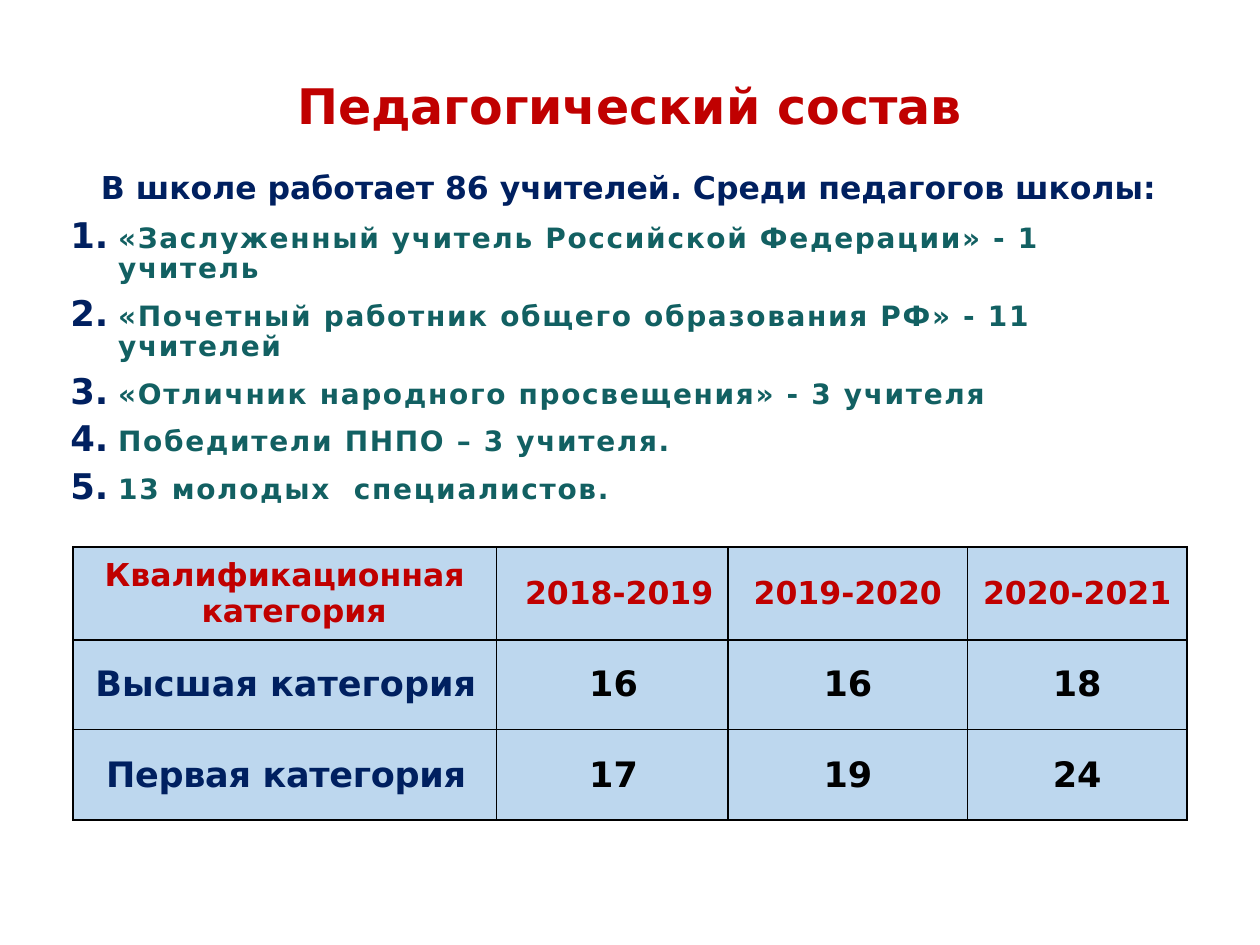
"""Build the slide on the teaching staff, with a numbered list and a table."""
from dataclasses import dataclass

from lxml.etree import SubElement
from pptx import Presentation
from pptx.dml.color import RGBColor
from pptx.enum.text import MSO_ANCHOR, PP_ALIGN
from pptx.oxml.ns import qn
from pptx.util import Inches, Pt


@dataclass(frozen=True)
class Theme:
    font: str = "DejaVu Sans"
    red: str = "C00000"
    navy: str = "002060"
    teal: str = "126062"
    black: str = "000000"
    blue: str = "BDD7EE"
    title: int = 28
    lead: int = 18
    item: int = 16
    head: int = 18
    cell: int = 20


theme = Theme()


def style(para, size, color, align=PP_ALIGN.LEFT, space=0):
    para.alignment = align
    for run in para.runs:
        font = run.font
        font.name, font.size, font.bold = theme.font, Pt(size), True
        font.color.rgb = RGBColor.from_string(color)
        if space:
            run._r.get_or_add_rPr().set("spc", str(space))


def indent(para, left, first):
    props = para._p.get_or_add_pPr()
    props.set("marL", str(Inches(left)))
    props.set("indent", str(Inches(first)))
    return props


deck = Presentation()
deck.slide_width, deck.slide_height = Inches(10), Inches(7.5)
slide = deck.slides.add_slide(deck.slide_layouts[5])

title = slide.shapes.title
title.left, title.top = Inches(0.52), Inches(0.24)
title.width, title.height = Inches(8.95), Inches(1.25)
frame = title.text_frame
frame.text = "Педагогический состав"
frame.vertical_anchor = MSO_ANCHOR.MIDDLE
frame.paragraphs[0].line_spacing = 0.9
style(frame.paragraphs[0], theme.title, theme.red, PP_ALIGN.CENTER)

body = slide.shapes.add_textbox(Inches(0.46), Inches(1.32), Inches(9.06), Inches(2.9))
frame = body.text_frame
frame.word_wrap = True
lead = frame.paragraphs[0]
lead.text = "В школе работает 86 учителей. Среди педагогов школы:"
lead.line_spacing = 0.9
style(lead, theme.lead, theme.navy, PP_ALIGN.CENTER)

items = [
    "«Заслуженный учитель Российской Федерации» - 1 учитель",
    "«Почетный работник общего образования РФ» - 11 учителей",
    "«Отличник народного просвещения» - 3 учителя",
    "Победители ПНПО – 3 учителя.",
    "13 молодых  специалистов.",
]
for item in items:
    para = frame.add_paragraph()
    para.text = item
    props = indent(para, 0.38, -0.38)
    tint = SubElement(props, qn("a:buClr"))
    SubElement(tint, qn("a:srgbClr"), val=theme.navy)
    SubElement(props, qn("a:buSzPct"), val="126000")
    SubElement(props, qn("a:buFont"), typeface=theme.font)
    SubElement(props, qn("a:buAutoNum"), type="arabicPeriod")
    para.line_spacing, para.space_before = 0.9, Pt(10)
    style(para, theme.item, theme.teal, space=100)

rows = [
    ["Квалификационная категория", "2018-2019", "2019-2020", "2020-2021"],
    ["Высшая категория", "16", "16", "18"],
    ["Первая категория", "17", "19", "24"],
]
widths, heights = [3.36, 1.84, 1.9, 1.74], [0.74, 0.71, 0.72]
table = slide.shapes.add_table(
    len(rows), len(widths), Inches(0.58), Inches(4.34),
    Inches(sum(widths)), Inches(sum(heights))).table
table.first_row = table.horz_banding = False
for col, width in zip(table.columns, widths):
    col.width = Inches(width)
for row, height in zip(table.rows, heights):
    row.height = Inches(height)

for r, row in enumerate(rows):
    for c, text in enumerate(row):
        cell = table.cell(r, c)
        cell.text_frame.text = text
        cell.vertical_anchor = MSO_ANCHOR.MIDDLE
        cell.margin_left = cell.margin_right = Inches(0.03)
        cell.margin_top = cell.margin_bottom = 0
        for side in ("lnL", "lnR", "lnT", "lnB"):
            line = SubElement(cell._tc.get_or_add_tcPr(), qn("a:" + side), w=str(Pt(1)))
            paint = SubElement(line, qn("a:solidFill"))
            SubElement(paint, qn("a:srgbClr"), val=theme.black)
        cell.fill.solid()
        cell.fill.fore_color.rgb = RGBColor.from_string(theme.blue)
        para = cell.text_frame.paragraphs[0]
        if r == 0:
            size, color = theme.head, theme.red
        else:
            size, color = theme.cell, theme.black if c else theme.navy
        style(para, size, color, PP_ALIGN.CENTER, -20 if (r, c) == (2, 0) else 0)
        if (r, c) == (0, 0):
            indent(para, 0.15, -0.15)
        elif c < 2:
            indent(para, 0 if r else 0.09, 0.02)

deck.save("out.pptx")
